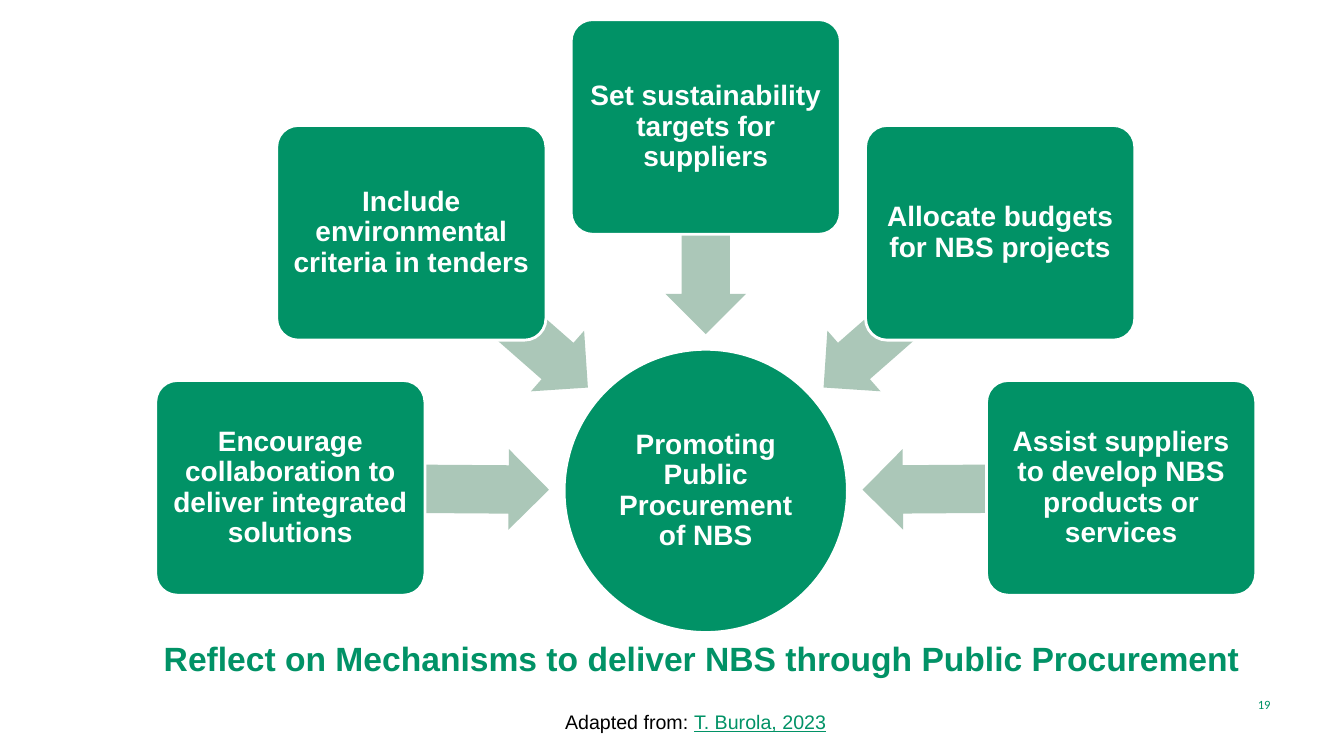
from math import atan2, degrees, hypot

from pptx import Presentation
from pptx.dml.color import RGBColor
from pptx.enum.shapes import MSO_SHAPE
from pptx.enum.text import MSO_ANCHOR, MSO_AUTO_SIZE, PP_ALIGN
from pptx.util import Inches, Pt

OVAL, CARD, ARROW = MSO_SHAPE.OVAL, MSO_SHAPE.ROUNDED_RECTANGLE, MSO_SHAPE.LEFT_ARROW
MID, LOW = MSO_ANCHOR.MIDDLE, MSO_ANCHOR.BOTTOM
CENTER, RIGHT = PP_ALIGN.CENTER, PP_ALIGN.RIGHT
FIXED = MSO_AUTO_SIZE.NONE

WIDE, HIGH = 13.33, 7.5
GREEN, PALE, WHITE, BLACK = "019266", "ABC7B8", "FFFFFF", "000000"

# Hub centre, hub diameter and card size; cards are offset from the hub
HUB = (7.0, 4.87)
DISC = 2.81
CARD_W, CARD_H = 2.67, 2.13
GAP = 0.15
THICK = 0.8
CARDS = [
    (-4.12, -0.03, "Encourage collaboration to deliver integrated solutions"),
    (-2.92, -2.56, "Include environmental criteria in tenders"),
    (0, -3.61, "Set sustainability targets for suppliers"),
    (2.92, -2.56, "Allocate budgets for NBS projects"),
    (4.12, -0.03, "Assist suppliers to develop NBS products or services"),
]


def color(code):
    return RGBColor.from_string(code)


def apply(item, form):
    for name, value in form.items():
        setattr(item, name, value)


def write(shape, runs, size, align=CENTER, anchor=MID, inset=(0.1, 0.05),
          face="Arial", bold=False, space=1.0):
    """Fill one paragraph with (text, colour, underline) runs."""
    frame = shape.text_frame
    across, down = map(Inches, inset)
    apply(frame, {"word_wrap": True, "auto_size": FIXED, "vertical_anchor": anchor,
                  "margin_left": across, "margin_right": across,
                  "margin_top": down, "margin_bottom": down})
    para = frame.paragraphs[0]
    apply(para, {"alignment": align, "line_spacing": space})
    for text, code, under in runs:
        run = para.add_run()
        run.text = text
        apply(run.font, {"name": face, "size": Pt(size), "bold": bold,
                         "underline": under})
        run.font.color.rgb = color(code)


def shape_at(slide, kind, mid, width, height, fill, edge=None):
    """Add a flat shape centred on a point."""
    box = (mid[0] - width / 2, mid[1] - height / 2, width, height)
    shape = slide.shapes.add_shape(kind, *map(Inches, box))
    shape.shadow.inherit = False
    shape.fill.solid()
    shape.fill.fore_color.rgb = color(fill)
    if edge:
        shape.line.color.rgb = color(edge)
        shape.line.width = Pt(2)
    else:
        shape.line.fill.background()
    return shape


def wheel(slide, hub):
    """Draw the central disc and the cards that point at it."""
    look = {"size": 20, "bold": True, "space": 0.9}
    disc = shape_at(slide, OVAL, hub, DISC, DISC, GREEN, WHITE)
    write(disc, [("Promoting Public Procurement of NBS", WHITE, None)],
          inset=(0.01, 0.01), **look)
    for dx, dy, text in CARDS:
        # Arrow runs from the card's centre to just outside the disc
        reach = hypot(dx, dy)
        near = DISC / 2 + GAP
        share = (reach + near) / 2 / reach
        mid = (hub[0] + dx * share, hub[1] + dy * share)
        arrow = shape_at(slide, ARROW, mid, reach - near, THICK, PALE)
        arrow.adjustments[0] = 0.6
        arrow.rotation = degrees(atan2(dy, dx)) % 360

        card = shape_at(slide, CARD, (hub[0] + dx, hub[1] + dy),
                        CARD_W, CARD_H, GREEN, WHITE)
        card.adjustments[0] = 0.1
        write(card, [(text, WHITE, None)], inset=(0.04, 0.04), **look)


def heading(slide, box):
    title = slide.shapes.title
    apply(title, dict(zip(("left", "top", "width", "height"), map(Inches, box))))
    text = "Reflect on Mechanisms to deliver NBS through Public Procurement "
    write(title, [(text, GREEN, None)], 24, anchor=LOW, bold=True)


def label(slide, box, runs, size, **form):
    write(slide.shapes.add_textbox(*map(Inches, box)), runs, size, **form)


def main():
    deck = Presentation()
    apply(deck, {"slide_width": Inches(WIDE), "slide_height": Inches(HIGH)})
    slide = deck.slides.add_slide(deck.slide_layouts[5])
    heading(slide, (1.2, 6.14, 11.61, 0.64))
    wheel(slide, HUB)
    # Page number and credit
    label(slide, (11.55, 6.79, 1.15, 0.4), [("19", GREEN, None)], 9,
          align=RIGHT, face="Calibri")
    label(slide, (2.48, 6.99, 8.84, 0.34),
          [("Adapted from: ", BLACK, None), ("T. Burola, 2023", GREEN, True)], 14)
    deck.save("out.pptx")


if __name__ == "__main__":
    main()
